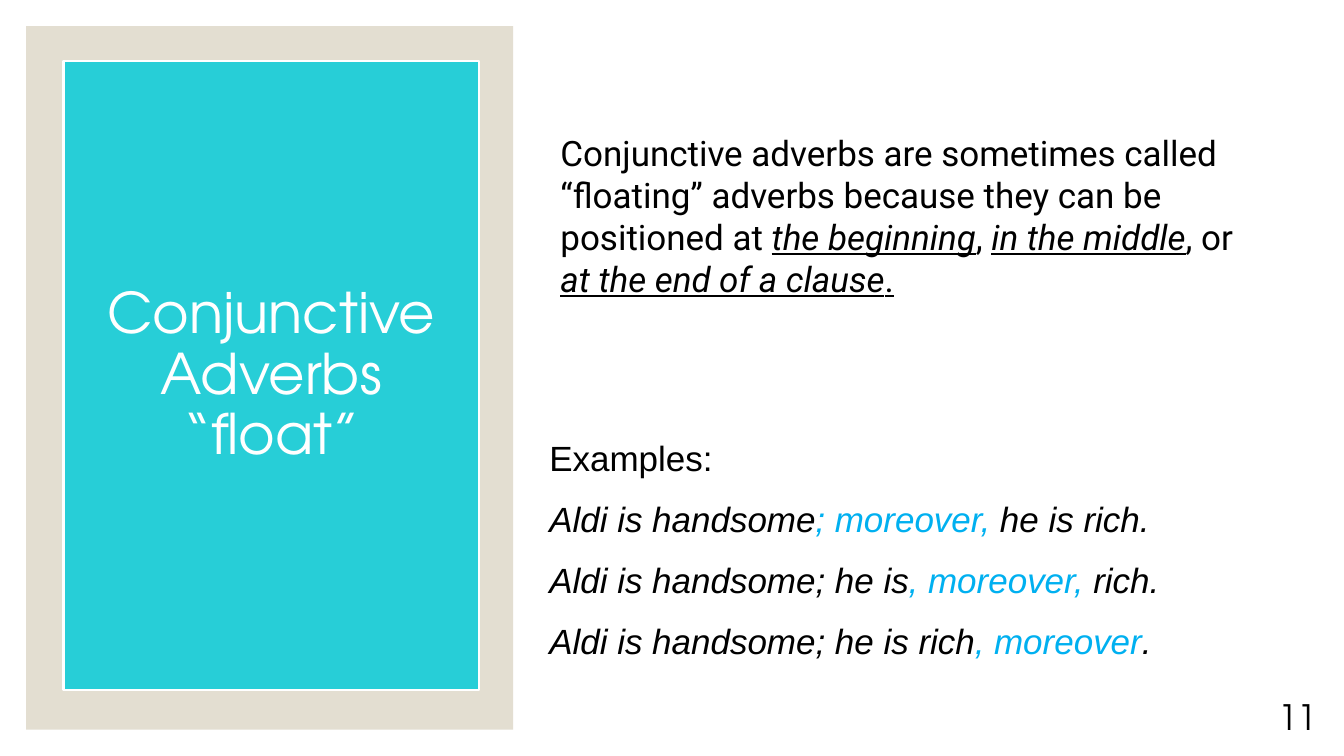
from dataclasses import dataclass

from pptx import Presentation
from pptx.dml.color import RGBColor
from pptx.enum.shapes import MSO_SHAPE
from pptx.enum.text import MSO_ANCHOR, PP_ALIGN
from pptx.util import Inches, Pt


@dataclass(frozen=True)
class Theme:
    white: str = "FFFFFF"
    black: str = "000000"
    sand: str = "E3DED1"
    teal: str = "27CED7"
    accent: str = "00B0F0"
    title_size: int = 40
    body_size: int = 25
    display_font: str = "TeX Gyre Adventor"
    body_font: str = "Roboto"
    example_font: str = "Arial"


THEME = Theme()


def add_panel(slide, left, top, width, height, fill, line=None):
    sp = slide.shapes.add_shape(MSO_SHAPE.RECTANGLE, Inches(left), Inches(top),
                                Inches(width), Inches(height))
    sp.shadow.inherit = False
    sp.fill.solid()
    sp.fill.fore_color.rgb = RGBColor.from_string(fill)
    if line:
        sp.line.color.rgb = RGBColor.from_string(line)
        sp.line.width = Pt(1.5)
    else:
        sp.line.fill.background()
    return sp


def add_text_frame(slide, left, top, width, height):
    box = slide.shapes.add_textbox(Inches(left), Inches(top),
                                   Inches(width), Inches(height))
    box.text_frame.word_wrap = True
    return box.text_frame


def add_run(p, text, *, font, size=THEME.body_size, color=THEME.black,
            italic=False, underline=False):
    r = p.add_run()
    r.text = text
    r.font.name = font
    r.font.size = Pt(size)
    r.font.color.rgb = RGBColor.from_string(color)
    r.font.italic = italic
    r.font.underline = underline


def add_title(slide, text):
    sp = add_panel(slide, 0.63, 0.61, 4.12, 6.24, THEME.teal, THEME.white)
    tf = sp.text_frame
    tf.word_wrap = True
    tf.margin_left = tf.margin_right = Inches(0.2)
    tf.vertical_anchor = MSO_ANCHOR.MIDDLE
    p = tf.paragraphs[0]
    p.alignment = PP_ALIGN.CENTER
    p.line_spacing = 0.9
    add_run(p, text, font=THEME.display_font, size=THEME.title_size, color=THEME.white)


def add_definition(slide):
    p = add_text_frame(slide, 5.46, 1.26, 7.12, 1.86).paragraphs[0]
    pieces = [
        ("Conjunctive adverbs are sometimes called “floating” adverbs "
         "because they can be positioned at ", False, False),
        ("the beginning", True, True),
        (", ", False, False),
        ("in the middle", True, True),
        (", or ", False, False),
        ("at the end of a clause", True, True),
        (".", False, True),
    ]
    for text, italic, underline in pieces:
        add_run(p, text, font=THEME.body_font, italic=italic, underline=underline)


def add_examples(slide):
    """Heading and sentences, each with its floating adverb highlighted."""
    tf = add_text_frame(slide, 5.35, 4.28, 7.73, 2.6)
    p = tf.paragraphs[0]
    p.space_after = Pt(13.6)
    add_run(p, "Examples:", font=THEME.example_font)
    sentences = [
        ("Aldi is handsome", "; moreover,", " he is rich."),
        ("Aldi is handsome; he is", ", moreover,", " rich."),
        ("Aldi is handsome; he is rich", ", moreover", "."),
    ]
    colors = (THEME.black, THEME.accent, THEME.black)
    for sentence in sentences:
        p = tf.add_paragraph()
        p.space_after = Pt(13.6)
        for text, color in zip(sentence, colors):
            add_run(p, text, font=THEME.example_font, color=color, italic=True)


def add_page_number(slide, number):
    p = add_text_frame(slide, 12.58, 6.85, 0.81, 0.54).paragraphs[0]
    add_run(p, str(number), font=THEME.display_font)


def main():
    prs = Presentation()
    prs.slide_width, prs.slide_height = Inches(13.33), Inches(7.5)
    s = prs.slides.add_slide(prs.slide_layouts[6])
    s.background.fill.solid()
    s.background.fill.fore_color.rgb = RGBColor.from_string(THEME.white)
    add_panel(s, 0.26, 0.26, 4.83, 6.98, THEME.sand)
    add_title(s, "Conjunctive Adverbs “float”")
    add_definition(s)
    add_page_number(s, 11)
    add_examples(s)
    prs.save("out.pptx")


if __name__ == "__main__":
    main()
